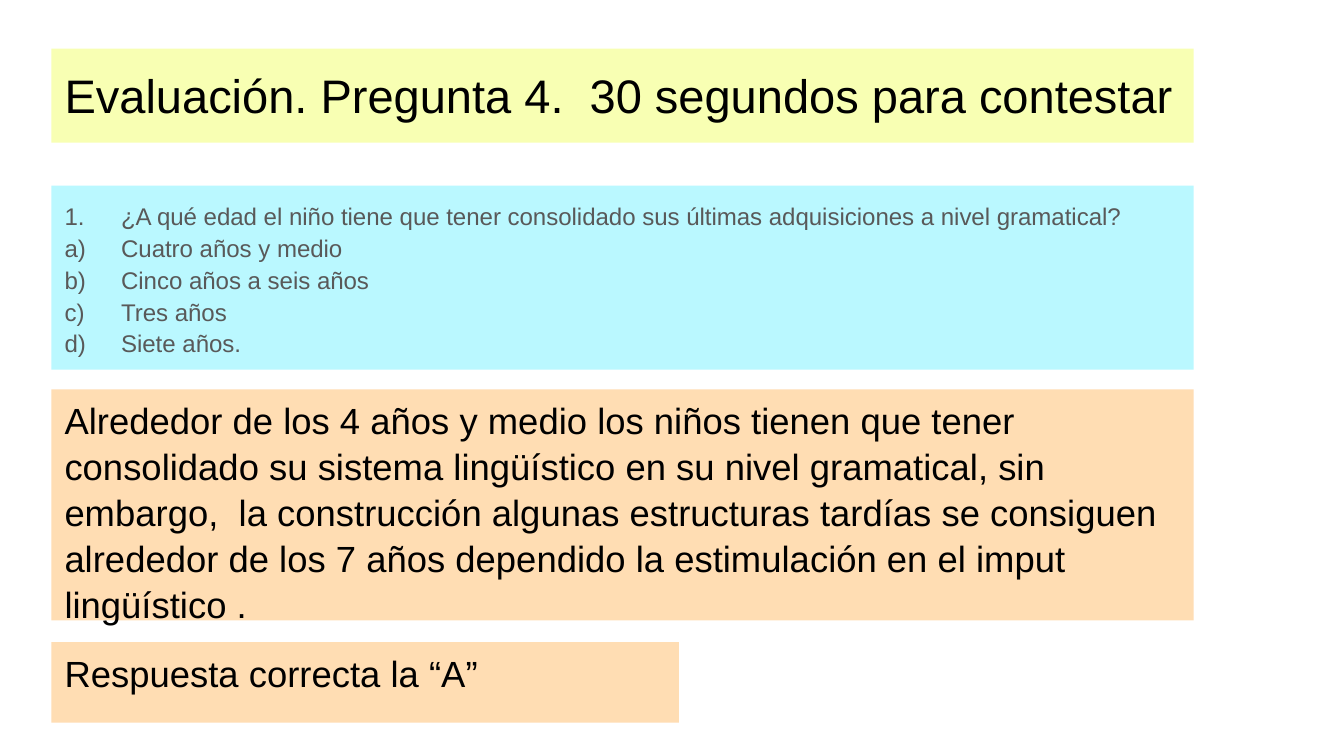
from dataclasses import dataclass

from lxml import etree
from pptx import Presentation
from pptx.dml.color import RGBColor
from pptx.enum.shapes import MSO_SHAPE
from pptx.enum.text import MSO_ANCHOR, PP_ALIGN
from pptx.oxml.ns import qn
from pptx.util import Cm, Pt

RECTANGLE = MSO_SHAPE.RECTANGLE
TOP = MSO_ANCHOR.TOP
LEFT = PP_ALIGN.LEFT


@dataclass(frozen=True)
class Theme:
    font: str = "Arial"
    ink: str = "000000"
    grey: str = "595959"
    yellow: str = "F8FFB3"
    blue: str = "BAF8FF"
    peach: str = "FFDDB3"
    title_size: float = 25.2
    question_size: float = 12.9
    answer_size: float = 19.5


THEME = Theme()

TITLE = "Evaluación. Pregunta 4.  30 segundos para contestar"
QUESTION = "¿A qué edad el niño tiene que tener consolidado sus últimas adquisiciones a nivel gramatical?"
OPTIONS = ["Cuatro años y medio", "Cinco años a seis años", "Tres años", "Siete años."]
EXPLANATION = (
    "Alrededor de los 4 años y medio los niños tienen que tener consolidado su sistema "
    "lingüístico en su nivel gramatical, sin embargo,  la construcción algunas estructuras "
    "tardías se consiguen alrededor de los 7 años dependido la estimulación en el imput "
    "lingüístico ."
)
CORRECT_ANSWER = "Respuesta correcta la “A”"

MARGIN_LEFT = Cm(0.97)
FULL_WIDTH = Cm(21.59)
ANSWER_WIDTH = Cm(11.86)
SIDE_INSET = Cm(0.25)
WIDE_INSET = Cm(0.25)
NARROW_INSET = Cm(0.13)
NUMBER_INDENT = Cm(1.07)


def number_paragraph(paragraph, scheme, color):
    properties = paragraph._p.get_or_add_pPr()
    properties.set("marL", str(NUMBER_INDENT))
    properties.set("indent", str(-NUMBER_INDENT))
    bullet_color = etree.SubElement(properties, qn("a:buClr"))
    etree.SubElement(bullet_color, qn("a:srgbClr"), val=color)
    etree.SubElement(properties, qn("a:buAutoNum"), type=scheme)


def add_panel(slide, top, height, width, fill, lines, size, color, spacing, inset, schemes=()):
    panel = slide.shapes.add_shape(RECTANGLE, MARGIN_LEFT, top, width, height)
    panel.shadow.inherit = False
    panel.fill.solid()
    panel.fill.fore_color.rgb = RGBColor.from_string(fill)
    panel.line.fill.background()
    frame = panel.text_frame
    frame.word_wrap = True
    frame.vertical_anchor = TOP
    frame.margin_left = frame.margin_right = SIDE_INSET
    frame.margin_top = frame.margin_bottom = inset
    frame.text = "\n".join(lines)
    for paragraph, scheme in zip(frame.paragraphs, schemes):
        number_paragraph(paragraph, scheme, color)
    for paragraph in frame.paragraphs:
        paragraph.alignment = LEFT
        paragraph.line_spacing = spacing
        for run in paragraph.runs:
            run.font.name = THEME.font
            run.font.size = Pt(size)
            run.font.color.rgb = RGBColor.from_string(color)


def main():
    presentation = Presentation()
    presentation.slide_width = Cm(25.4)
    presentation.slide_height = Cm(14.29)
    slide = presentation.slides.add_slide(presentation.slide_layouts[6])

    add_panel(slide, Cm(0.92), Cm(1.78), FULL_WIDTH, THEME.yellow, [TITLE],
              THEME.title_size, THEME.ink, 1.08, WIDE_INSET)
    schemes = ["arabicPeriod"] + ["alphaLcParenR"] * len(OPTIONS)
    add_panel(slide, Cm(3.51), Cm(3.48), FULL_WIDTH, THEME.blue, [QUESTION, *OPTIONS],
              THEME.question_size, THEME.grey, 1.1, WIDE_INSET, schemes)
    for text, top, height, width in [
        (EXPLANATION, Cm(7.36), Cm(4.37), FULL_WIDTH),
        (CORRECT_ANSWER, Cm(12.14), Cm(1.52), ANSWER_WIDTH),
    ]:
        add_panel(slide, top, height, width, THEME.peach, [text],
                  THEME.answer_size, THEME.ink, 1.05, NARROW_INSET)

    presentation.save("out.pptx")


if __name__ == "__main__":
    main()
